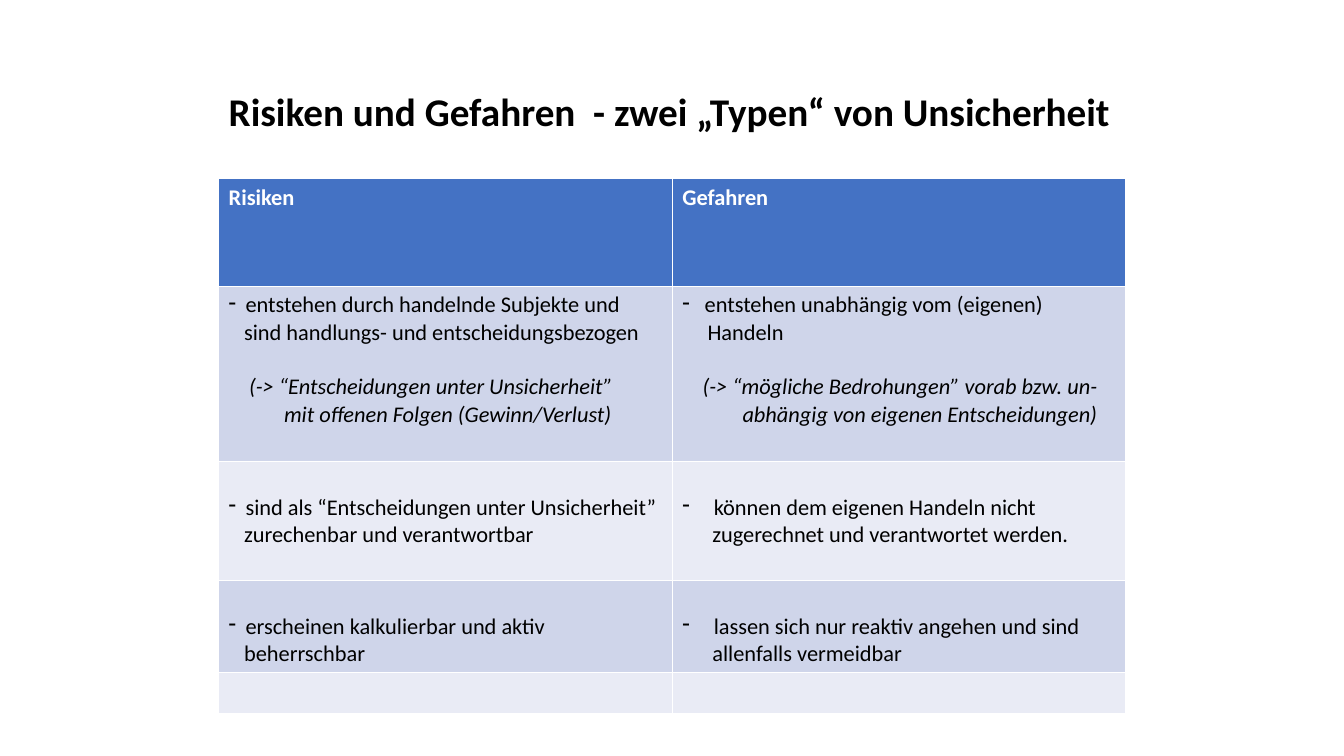
from pptx import Presentation
from pptx.dml.color import RGBColor
from pptx.enum.text import MSO_ANCHOR, MSO_AUTO_SIZE, PP_ALIGN
from pptx.oxml.ns import qn
from pptx.util import Pt
from lxml.etree import SubElement

LINE = 19.5  # height of one 16 pt line
HEADER, BAND_DARK, BAND_LIGHT = "4472C4", "CFD5EA", "E9EBF5"


def style(paragraph, size, color, bold=False, italic=False):
    for run in paragraph.runs:
        font = run.font
        font.name, font.size = "Calibri", Pt(size)
        font.bold, font.italic = bold, italic
        font.color.rgb = RGBColor.from_string(color)


def indent(paragraph, left, dash):
    """Indent a paragraph; a dash hangs at the cell margin."""
    properties = paragraph._p.get_or_add_pPr()
    properties.set("marL", str(Pt(left)))
    properties.set("indent", str(Pt(-left if dash else 0)))
    if dash:
        SubElement(properties, qn("a:buChar")).set("char", "-")


presentation = Presentation()
presentation.slide_width, presentation.slide_height = Pt(960), Pt(540)
slide = presentation.slides.add_slide(presentation.slide_layouts[5])

title = slide.shapes.title
title.left, title.top, title.width, title.height = Pt(156.2), Pt(28.8), Pt(738), Pt(104.4)
title.text_frame.text = "Risiken und Gefahren  - zwei „Typen“ von Unsicherheit"
title.text_frame.vertical_anchor = MSO_ANCHOR.MIDDLE
title.text_frame.auto_size = MSO_AUTO_SIZE.NONE
heading = title.text_frame.paragraphs[0]
heading.alignment = PP_ALIGN.LEFT
heading.line_spacing = 0.9
style(heading, 28, "000000", bold=True)

# Each cell lists its lines as (indent, text); the first line has the dash,
# lines after the second are an italic remark.
comparison = [
    ([(0, "Risiken")], [(0, "Gefahren")]),
    (
        [
            (12, "entstehen durch handelnde Subjekte und"),
            (11, "sind handlungs- und entscheidungsbezogen"),
            (14.5, "(-> “Entscheidungen unter Unsicherheit”"),
            (39.5, "mit offenen Folgen (Gewinn/Verlust)"),
        ],
        [
            (16, "entstehen unabhängig vom (eigenen)"),
            (18, "Handeln"),
            (14.5, "(-> “mögliche Bedrohungen” vorab bzw. un-"),
            (43, "abhängig von eigenen Entscheidungen)"),
        ],
    ),
    (
        [
            (12, "sind als “Entscheidungen unter Unsicherheit”"),
            (11, "zurechenbar und verantwortbar"),
        ],
        [
            (22.5, "können dem eigenen Handeln nicht"),
            (21.5, "zugerechnet und verantwortet werden."),
        ],
    ),
    (
        [(12, "erscheinen kalkulierbar und aktiv"), (11, "beherrschbar")],
        [
            (22.5, "lassen sich nur reaktiv angehen und sind"),
            (21.5, "allenfalls vermeidbar"),
        ],
    ),
    ([], []),
]
row_heights = [77, 125, 85, 65.7, 29.5]

table = slide.shapes.add_table(
    len(comparison), 2, Pt(156.2), Pt(127.6), Pt(648), Pt(sum(row_heights))
).table
for column in table.columns:
    column.width = Pt(324)

for row, (kinds, height) in enumerate(zip(comparison, row_heights)):
    table.rows[row].height = Pt(height)
    is_header = row == 0
    band = HEADER if is_header else BAND_DARK if row % 2 else BAND_LIGHT
    for col, lines in enumerate(kinds):
        cell = table.cell(row, col)
        cell.fill.solid()
        cell.fill.fore_color.rgb = RGBColor.from_string(band)
        if row in (2, 3):
            cell.margin_top = Pt(3.6 + LINE)
        cell.text_frame.text = "\n".join(text for _, text in lines)
        for number, (left, _) in enumerate(lines):
            paragraph = cell.text_frame.paragraphs[number]
            if number == 2:
                paragraph.space_before = Pt(LINE)
            indent(paragraph, left, dash=number == 0 and not is_header)
            style(paragraph, 16, "FFFFFF" if is_header else "000000",
                  bold=is_header, italic=number >= 2)

presentation.save("out.pptx")
